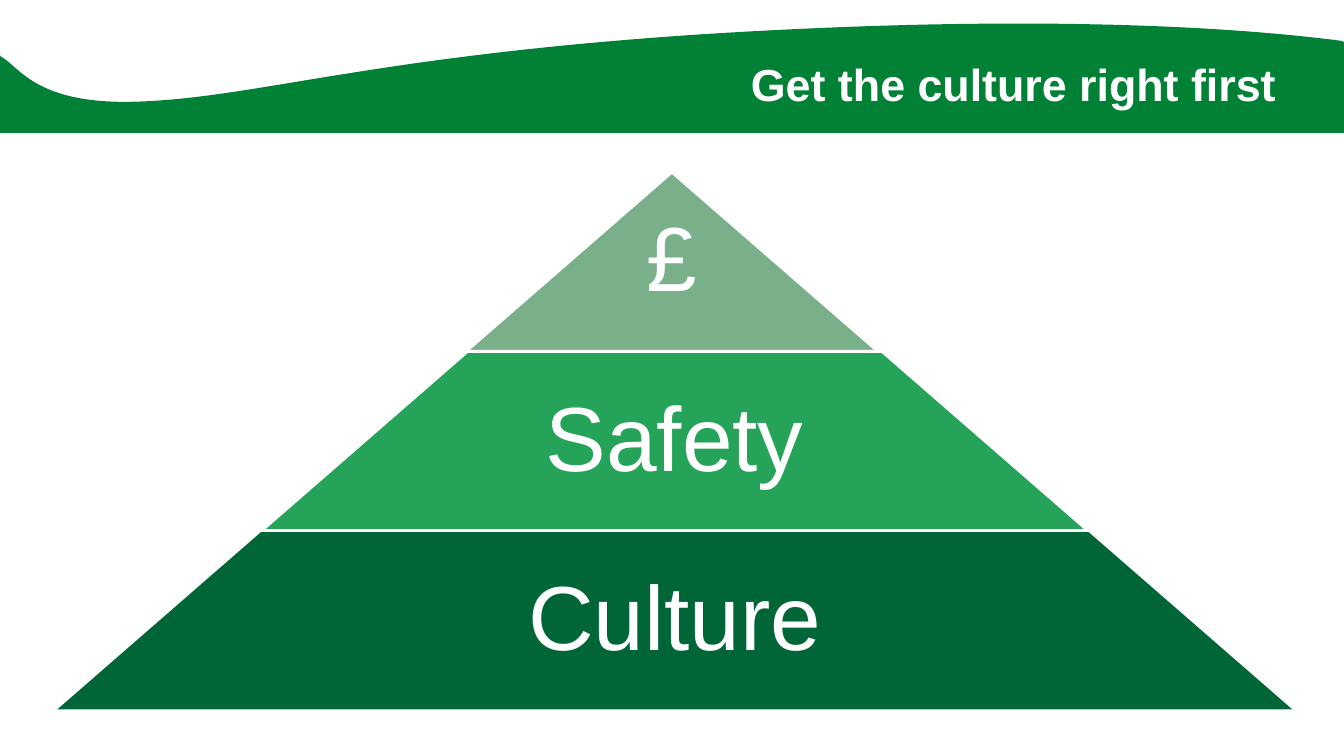
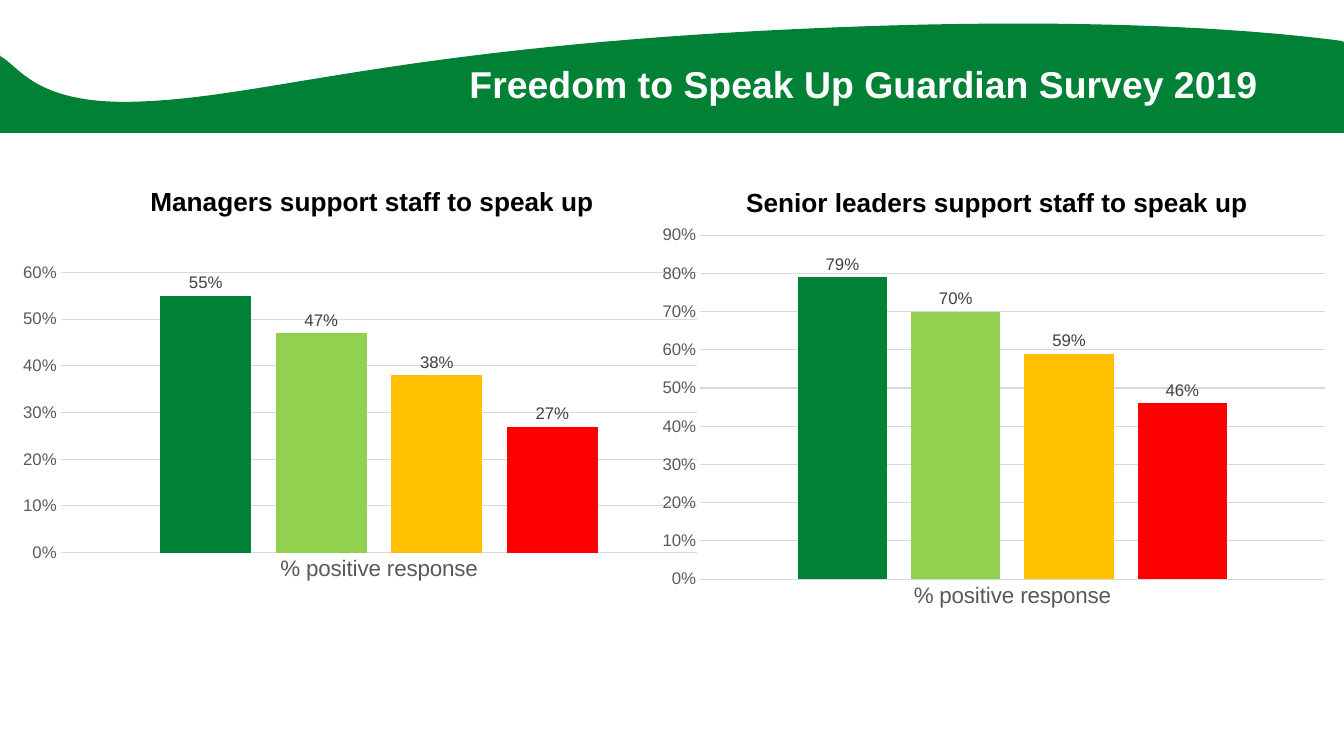
from pptx import Presentation
from pptx.chart.data import CategoryChartData
from pptx.dml.color import RGBColor
from pptx.enum.chart import XL_CHART_TYPE, XL_LABEL_POSITION, XL_TICK_MARK
from pptx.enum.shapes import MSO_SHAPE
from pptx.enum.text import MSO_ANCHOR, MSO_AUTO_SIZE, PP_ALIGN
from pptx.oxml import parse_xml
from pptx.oxml.ns import nsdecls
from pptx.util import Pt

SLIDE_W, SLIDE_H = 960, 540
FONT = "Arial"
COLORS = {
    "white": "FFFFFF",
    "black": "000000",
    "green": "008136",
    "sage": "79B089",
    "mid_green": "25A359",
    "dark_green": "006637",
    "lime": "92D050",
    "amber": "FFC000",
    "red": "FF0000",
    "grid": "D9D9D9",
    "axis": "595959",
    "label": "404040",
}

# Header wave: start point, then cubic segments running right to left
BAND_BOTTOM = 95
WAVE_START = (964, 30)
WAVE_CURVES = [
    ((887, 19.5), (739, 9.5), (502, 24.5)),
    ((264, 40), (181, 70.5), (96, 72.7)),
    ((11, 75), (12, 35.5), (-8.6, 38.9)),
]


def rgb(name):
    return RGBColor.from_string(COLORS[name])


def style_font(font, size, color, bold=False):
    font.name = FONT
    font.size = Pt(size)
    font.bold = bold
    font.color.rgb = rgb(color)


def bezier(p0, p1, p2, p3, steps=40):
    """Points along a cubic curve, without its start."""
    for i in range(1, steps + 1):
        t = i / steps
        u = 1 - t
        yield tuple(u**3 * a + 3 * u * u * t * b + 3 * u * t * t * c + t**3 * d
                    for a, b, c, d in zip(p0, p1, p2, p3))


def add_wave(slide, layout):
    """Draw the green header wave and move it to the shared layout."""
    points = [WAVE_START]
    for curve in WAVE_CURVES:
        points.extend(bezier(points[-1], *curve))
    points = [(min(max(x, 0), SLIDE_W), y) for x, y in points]
    points += [(0, BAND_BOTTOM), (SLIDE_W, BAND_BOTTOM)]
    outline = [(Pt(x), Pt(y)) for x, y in points]
    builder = slide.shapes.build_freeform(*outline[0])
    builder.add_line_segments(outline[1:], close=True)
    sp = builder.convert_to_shape()
    sp.shadow.inherit = False
    sp.fill.solid()
    sp.fill.fore_color.rgb = rgb("green")
    sp.line.fill.background()
    layout.shapes.element.insert(2, sp.element)


def set_title(slide, text, left, size):
    title = slide.shapes.title
    title.left, title.top = Pt(left), Pt(13)
    title.width, title.height = Pt(SLIDE_W - left), Pt(93.5)
    tf = title.text_frame
    tf.text = text
    tf.word_wrap = True
    tf.auto_size = MSO_AUTO_SIZE.NONE
    tf.vertical_anchor = MSO_ANCHOR.MIDDLE
    tf.margin_left = tf.margin_right = Pt(28.35)
    tf.margin_top = tf.margin_bottom = Pt(11.34)
    p = tf.paragraphs[0]
    p.alignment = PP_ALIGN.LEFT
    style_font(p.font, size, "white", bold=True)


def add_tier(slide, text, color, center, top, width, height):
    """One pyramid tier with its label centred over the full height."""
    box = Pt(center - width / 2), Pt(top), Pt(width), Pt(height)
    sp = slide.shapes.add_shape(MSO_SHAPE.TRAPEZOID, *box)
    sp.adjustments[0] = 1.149
    sp.shadow.inherit = False
    sp.fill.solid()
    sp.fill.fore_color.rgb = rgb(color)
    sp.line.color.rgb = rgb("white")
    sp.line.width = Pt(2)

    tf = slide.shapes.add_textbox(*box).text_frame
    tf.word_wrap = True
    tf.vertical_anchor = MSO_ANCHOR.MIDDLE
    tf.margin_top = tf.margin_bottom = Pt(6.5)
    p = tf.paragraphs[0]
    p.text = text
    p.alignment = PP_ALIGN.CENTER
    p.line_spacing = 0.9
    style_font(p.font, 65, "white")


def set_layout(element, index, target="", **place):
    """Fix a chart part at fractions of the chart area."""
    for old in element.xpath("c:layout"):
        element.remove(old)
    modes = "".join(f'<c:{k}Mode val="edge"/>' for k in "xy")
    values = "".join(f'<c:{k} val="{v}"/>' for k, v in place.items())
    element.insert(index, parse_xml(
        f'<c:layout {nsdecls("c")}><c:manualLayout>{target}{modes}{values}'
        '</c:manualLayout></c:layout>'))


def add_survey_chart(slide, title, values, box, top_value, title_at, plot_at):
    data = CategoryChartData(number_format="0%")
    data.categories = ["% positive response"]
    for i, value in enumerate(values, 1):
        data.add_series(f"Series {i}", [value])
    chart = slide.shapes.add_chart(
        XL_CHART_TYPE.COLUMN_CLUSTERED, *map(Pt, box), data).chart
    chart.has_legend = False
    style_font(chart.font, 10, "black")
    # See-through chart area, since the two charts overlap
    chart.element.xpath("c:chart")[0].addnext(parse_xml(
        f'<c:spPr {nsdecls("c", "a")}><a:noFill/><a:ln><a:noFill/></a:ln></c:spPr>'))

    # Title and plot area
    chart.has_title = True
    p = chart.chart_title.text_frame.paragraphs[0]
    p.text = title
    style_font(p.font, 18.7, "black", bold=True)
    set_layout(chart.chart_title.element, 1, **title_at)
    set_layout(chart.element.xpath("c:chart/c:plotArea")[0], 0,
               '<c:layoutTarget val="inner"/>', **plot_at)

    # Axes
    cat, val = chart.category_axis, chart.value_axis
    for axis, size in ((cat, 16), (val, 12)):
        axis.major_tick_mark = axis.minor_tick_mark = XL_TICK_MARK.NONE
        style_font(axis.tick_labels.font, size, "axis")
    val.minimum_scale, val.maximum_scale, val.major_unit = 0, top_value, 0.1
    val.tick_labels.number_format = "0%"
    val.tick_labels.number_format_is_linked = False
    val.format.line.fill.background()
    val.has_major_gridlines = True
    for line in (cat.format.line, val.major_gridlines.format.line):
        line.color.rgb = rgb("grid")
        line.width = Pt(0.75)

    # Columns and their values
    plot = chart.plots[0]
    plot.vary_by_categories = False
    plot.gap_width, plot.overlap = 219, -27
    for series, color in zip(plot.series, ("green", "lime", "amber", "red")):
        series.format.fill.solid()
        series.format.fill.fore_color.rgb = rgb(color)
        labels = series.data_labels
        labels.show_value = True
        labels.number_format = "0%"
        labels.number_format_is_linked = False
        labels.position = XL_LABEL_POSITION.OUTSIDE_END
        style_font(labels.font, 12, "label")


def build_pyramid(slide):
    set_title(slide, "Get the culture right first", 508, 32)
    tiers = [("£", "sage", 480), ("Safety", "mid_green", 482),
             ("Culture", "dark_green", 482)]
    for i, (text, color, center) in enumerate(tiers):
        add_tier(slide, text, color, center, 123 + 128 * i, 296 * (i + 1), 128.8)


def build_survey(slide):
    set_title(slide, "Freedom to Speak Up Guardian Survey 2019", 307, 26.7)
    add_survey_chart(
        slide, "Managers support staff to speak up", [0.55, 0.47, 0.38, 0.27],
        (8, 112.3, 505.4, 392.4), 0.6, dict(x=0.19, y=0.04),
        dict(x=0.07, y=0.21, w=0.9, h=0.51))
    add_survey_chart(
        slide, "Senior leaders support staff to speak up", [0.79, 0.7, 0.59, 0.46],
        (465.8, 112.3, 490.3, 327.6), 0.9, dict(x=0.13, y=0.05),
        dict(x=0.07, y=0.17, w=0.91, h=0.75))


def main():
    prs = Presentation()
    prs.slide_width, prs.slide_height = Pt(SLIDE_W), Pt(SLIDE_H)
    layout = prs.slide_layouts[5]
    pyramid, survey = (prs.slides.add_slide(layout) for _ in range(2))
    add_wave(pyramid, layout)
    build_pyramid(pyramid)
    build_survey(survey)
    prs.save("out.pptx")


if __name__ == "__main__":
    main()
